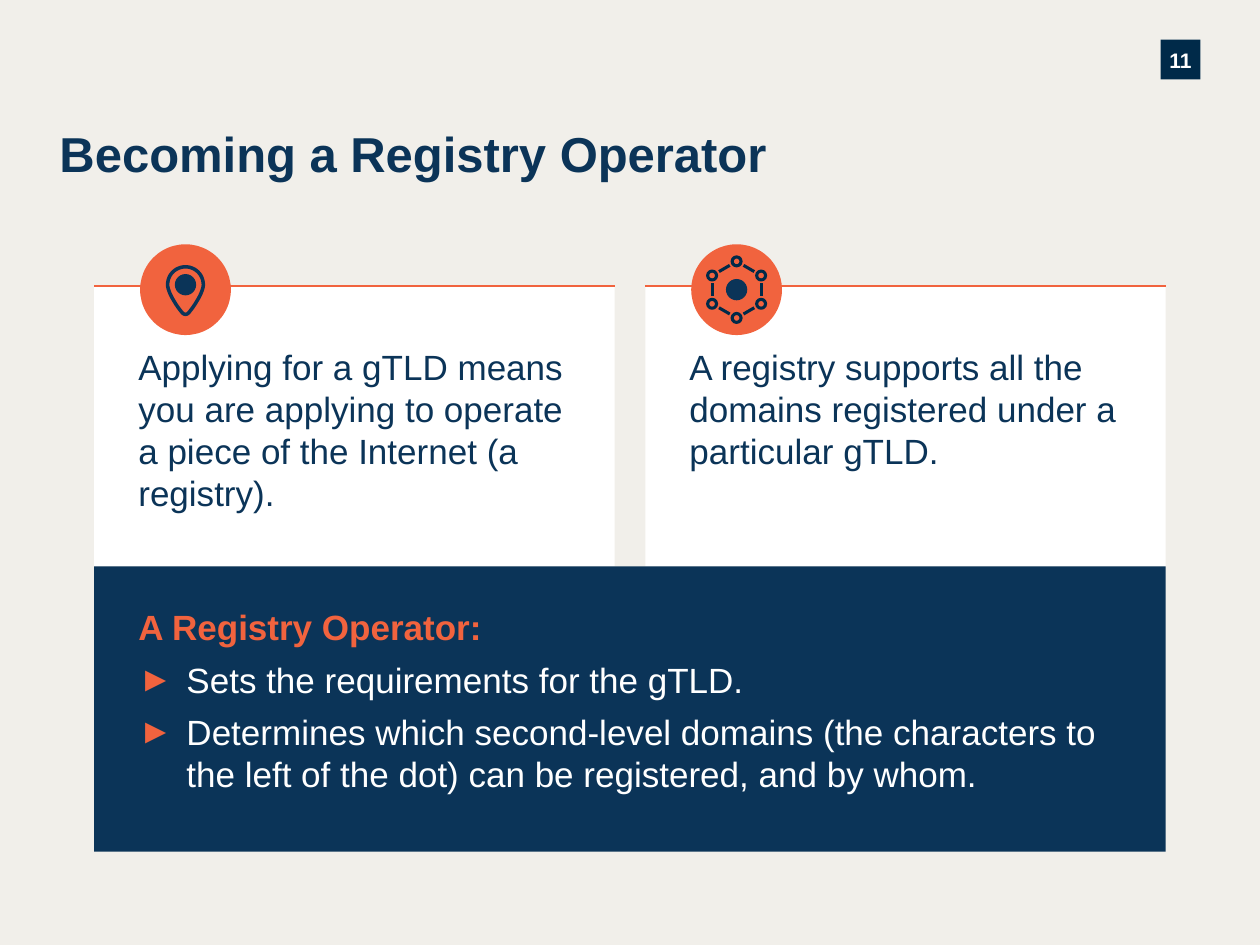
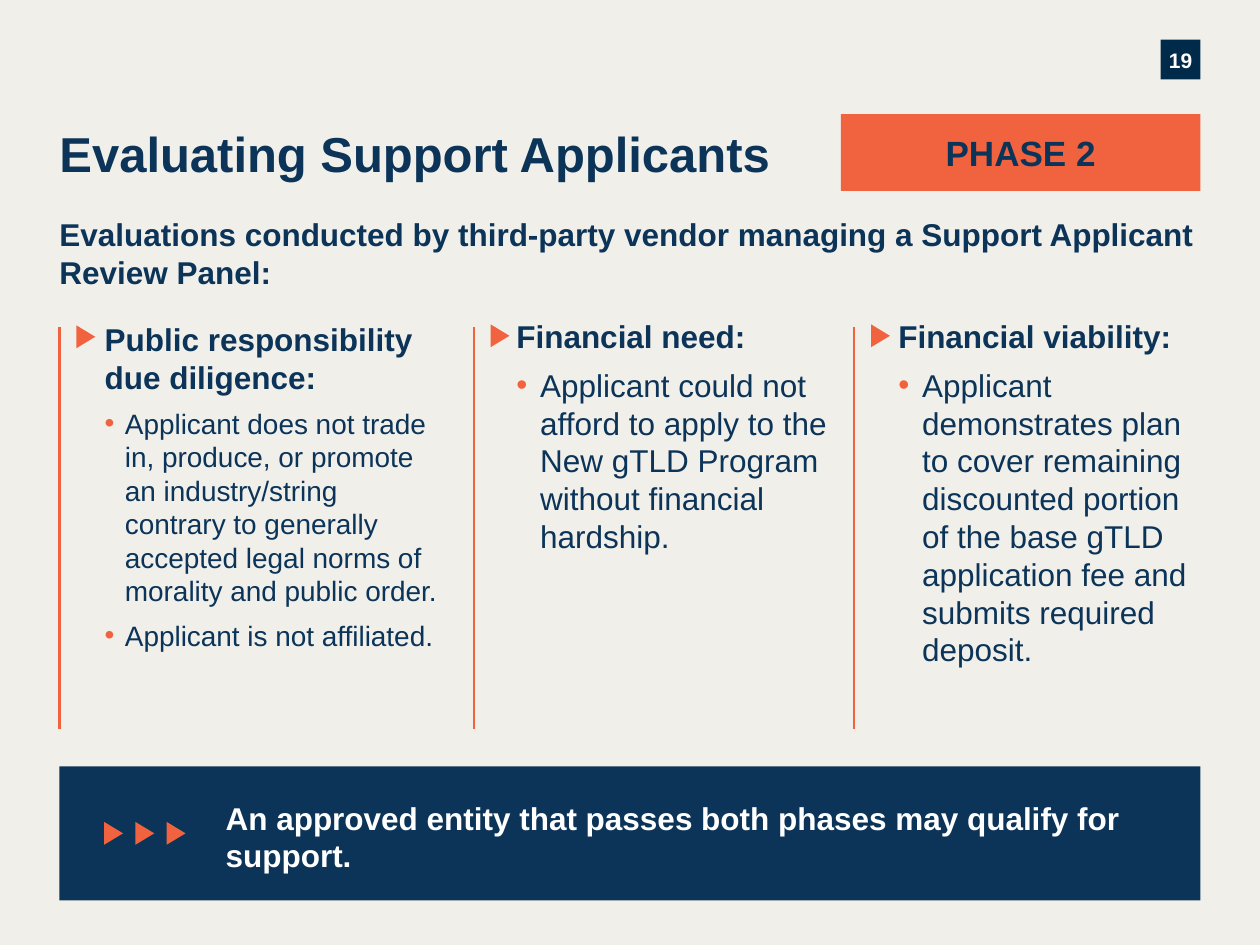
import dataclasses
import math

import lxml.etree
import pptx
import pptx.dml.color
import pptx.enum.shapes
import pptx.enum.text
import pptx.oxml.ns
import pptx.util

Cm, Pt = pptx.util.Cm, pptx.util.Pt
MSO = pptx.enum.shapes.MSO_SHAPE
ALIGN = pptx.enum.text.PP_ALIGN
ANCHOR = pptx.enum.text.MSO_ANCHOR
qn = pptx.oxml.ns.qn


@dataclasses.dataclass(frozen=True)
class Theme:
    font: str = "Arial"
    paper: str = "F1EFEA"
    white: str = "FFFFFF"
    navy: str = "0B3458"
    ink: str = "002A49"
    orange: str = "F1633E"
    title: int = 28
    large: int = 20
    medium: int = 18
    small: int = 16
    number: int = 12
    rule: float = 1.25
    link: float = 1.75
    pin: float = 2


T = Theme()
WIDTH, HEIGHT, MARGIN = 25.4, 19.05, 1.2
INNER = WIDTH - 2 * MARGIN

REGISTRY = {
    "number": "11",
    "title": "Becoming a Registry Operator",
    "cards": [
        ("pin", "Applying for a gTLD means you are applying to operate "
                "a piece of the Internet (a registry)."),
        ("network", "A registry supports all the domains registered under "
                    "a particular gTLD."),
    ],
    "heading": "A Registry Operator:",
    "duties": [
        "Sets the requirements for the gTLD.",
        "Determines which second-level domains (the characters to the left "
        "of the dot) can be registered, and by whom.",
    ],
}

EVALUATION = {
    "number": "19",
    "title": "Evaluating Support Applicants",
    "phase": "PHASE 2",
    "intro": "Evaluations conducted by third-party vendor managing a "
             "Support Applicant Review Panel:",
    "columns": [
        {"rule": 1.2, "text": (2.11, 6.45, 6.71), "arrow": 6.6,
         "size": T.small, "indent": 0.41,
         "heading": "Public responsibility\vdue diligence:",
         "points": [
             "Applicant does not trade in, produce, or promote an "
             "industry/string contrary to generally accepted legal norms of "
             "morality and public order.",
             "Applicant is not affiliated."]},
        {"rule": 9.55, "text": (10.41, 6.4, 6.38), "arrow": 6.58,
         "size": T.medium, "indent": 0.48,
         "heading": "Financial need:",
         "points": [
             "Applicant could not afford to apply to the New gTLD Program "
             "without financial hardship."]},
        {"rule": 17.22, "text": (18.11, 6.4, 6.1), "arrow": 6.58,
         "size": T.medium, "indent": 0.48,
         "heading": "Financial viability:",
         "points": [
             "Applicant demonstrates plan to cover remaining discounted "
             "portion of the base gTLD application fee and submits required "
             "deposit."]},
    ],
    "outcome": "An approved entity that passes both phases may qualify for "
               "support.",
}

PIN_START = (0.07, 0.56)
PIN_CURVES = [
    ((0.03, 0.61), (-0.03, 0.61), (-0.07, 0.56)),
    ((-0.18, 0.43), (-0.36, 0.15), (-0.36, 0)),
    ((-0.36, -0.2), (-0.2, -0.36), (0, -0.36)),
    ((0.2, -0.36), (0.36, -0.2), (0.36, 0)),
    ((0.36, 0.15), (0.18, 0.43), PIN_START),
]


def rgb(code):
    return pptx.dml.color.RGBColor.from_string(code)


def assign(obj, values):
    for name, value in values.items():
        setattr(obj, name, value)


def paint(sp, fill=None, line=None, width=T.rule):
    sp.shadow.inherit = False
    if fill:
        sp.fill.solid()
        sp.fill.fore_color.rgb = rgb(fill)
    else:
        sp.fill.background()
    if line:
        sp.line.color.rgb = rgb(line)
        sp.line.width = Pt(width)
    else:
        sp.line.fill.background()
    return sp


def shape(shapes, kind, x, y, w, h, fill=None, **border):
    sp = shapes.add_shape(kind, Cm(x), Cm(y), Cm(w), Cm(h))
    return paint(sp, fill, **border)


def disc(shapes, cx, cy, d, fill=None, **border):
    return shape(shapes, MSO.OVAL, cx - d / 2, cy - d / 2, d, d, fill, **border)


def line(shapes, start, end, color=T.orange, width=T.rule):
    cn = shapes.add_connector(pptx.enum.shapes.MSO_CONNECTOR.STRAIGHT,
                              *(Cm(v) for v in (*start, *end)))
    cn.line.color.rgb = rgb(color)
    cn.line.width = Pt(width)
    lxml.etree.SubElement(cn._element.spPr, qn("a:effectLst"))


def arrow(s, x, y):
    shape(s.shapes, MSO.ISOSCELES_TRIANGLE, x, y, 0.46, 0.38, T.orange).rotation = 90


def para(text, size, color=T.navy, bold=False, bullet=None, indent=0, **layout):
    return {"text": text, "bullet": bullet, "indent": indent, "layout": layout,
            "font": {"name": T.font, "size": Pt(size), "bold": bold},
            "color": color}


def add_bullet(p, char, indent):
    pPr = p._p.get_or_add_pPr()
    pPr.set("marL", str(Cm(indent)))
    pPr.set("indent", str(-Cm(indent)))
    color = lxml.etree.SubElement(pPr, qn("a:buClr"))
    lxml.etree.SubElement(color, qn("a:srgbClr"), val=T.orange)
    lxml.etree.SubElement(pPr, qn("a:buFont"), typeface=T.font)
    lxml.etree.SubElement(pPr, qn("a:buChar"), char=char)


def write(sp, paras, inset=(0, 0, 0, 0), anchor=ANCHOR.TOP):
    tf = sp.text_frame
    sides = ("margin_left", "margin_top", "margin_right", "margin_bottom")
    assign(tf, {"word_wrap": True, "vertical_anchor": anchor,
                **{side: Cm(v) for side, v in zip(sides, inset)}})
    for i, item in enumerate(paras):
        p = tf.add_paragraph() if i else tf.paragraphs[0]
        p.text = item["text"]
        if item["bullet"]:
            add_bullet(p, item["bullet"], item["indent"])
        assign(p, {"alignment": ALIGN.LEFT, **item["layout"]})
        for r in p.runs:
            assign(r.font, item["font"])
            r.font.color.rgb = rgb(item["color"])


def text(s, x, y, w, h, paras, **frame):
    write(s.shapes.add_textbox(Cm(x), Cm(y), Cm(w), Cm(h)), paras, **frame)


def new_slide(prs, content):
    s = prs.slides.add_slide(prs.slide_layouts[6])
    s.background.fill.solid()
    s.background.fill.fore_color.rgb = rgb(T.paper)
    side = 0.8
    badge = shape(s.shapes, MSO.RECTANGLE, WIDTH - MARGIN - side, side, side, side, T.ink)
    write(badge, [para(content["number"], T.number, T.white, True,
                       alignment=ALIGN.CENTER, line_spacing=1.08)],
          anchor=ANCHOR.MIDDLE)
    text(s, MARGIN, 2.49, 15, 1.3, [para(content["title"], T.title, bold=True)])
    return s


def pin(shapes, cx, cy):
    cy -= 0.1
    disc(shapes, cx, cy, 0.43, T.navy)
    points, a, steps = [], PIN_START, 12
    for b, c, d in PIN_CURVES:
        for t in (i / steps for i in range(1, steps + 1)):
            u = 1 - t
            points.append(tuple(
                Cm(o + u**3 * a[k] + 3 * u * u * t * b[k]
                   + 3 * u * t * t * c[k] + t**3 * d[k])
                for k, o in enumerate((cx, cy))))
        a = d
    outline = shapes.build_freeform(*points[-1])
    outline.add_line_segments(points, close=True)
    paint(outline.convert_to_shape(), line=T.navy, width=T.pin)


def network(shapes, cx, cy):
    disc(shapes, cx, cy, 0.43, T.navy)
    angles = [math.radians(60 * i - 90) for i in range(6)]
    nodes = [(cx + 0.57 * math.cos(a), cy + 0.57 * math.sin(a)) for a in angles]
    for (x1, y1), (x2, y2) in zip(nodes, nodes[1:] + nodes[:1]):
        start, end = ((x1 + (x2 - x1) * f, y1 + (y2 - y1) * f) for f in (0.28, 0.72))
        line(shapes, start, end, T.ink, T.link)
        disc(shapes, x1, y1, 0.18, line=T.ink, width=T.link)


ICONS = {"pin": pin, "network": network}


def registry_slide(prs):
    s = new_slide(prs, REGISTRY)
    left, top, total, gap, panel_top = 1.9, 5.77, 21.6, 0.62, 11.42
    cards = REGISTRY["cards"]
    w = (total - gap * (len(cards) - 1)) / len(cards)
    for i, (icon, words) in enumerate(cards):
        x = left + i * (w + gap)
        card = shape(s.shapes, MSO.RECTANGLE, x, top, w, panel_top - top, T.white)
        write(card, [para(words, T.large)], inset=(0.89, 1.19, 0.99, 0.76))
        line(s.shapes, (x, top), (x + w, top))
        group = s.shapes.add_group_shape().shapes
        center = x + 1.84, top + 0.07
        disc(group, *center, 1.83, T.orange)
        ICONS[icon](group, *center)
    panel = shape(s.shapes, MSO.RECTANGLE, left, panel_top, total, 5.75, T.navy)
    duties = [para(d, T.large, T.white, bullet="►", indent=0.97, space_before=Pt(6))
              for d in REGISTRY["duties"]]
    write(panel, [para(REGISTRY["heading"], T.large, T.orange, True), *duties],
          inset=(0.89, 0.79, 1.19, 0.76))


def evaluation_slide(prs):
    s = new_slide(prs, EVALUATION)
    tag = shape(s.shapes, MSO.RECTANGLE, 16.95, 2.3, 7.25, 1.55, T.orange)
    write(tag, [para(EVALUATION["phase"], T.large, bold=True, alignment=ALIGN.CENTER)],
          anchor=ANCHOR.MIDDLE)
    text(s, MARGIN, 4.34, INNER, 1.6, [para(EVALUATION["intro"], T.medium, bold=True)])
    for col in EVALUATION["columns"]:
        line(s.shapes, (col["rule"], 6.59), (col["rule"], 14.69))
        arrow(s, col["rule"] + 0.3, col["arrow"])
        points = [para(words, col["size"], bullet="•", indent=col["indent"],
                       space_before=Pt(6)) for words in col["points"]]
        text(s, *col["text"], 8, [para(col["heading"], T.medium, bold=True), *points])
    shape(s.shapes, MSO.RECTANGLE, MARGIN, 15.45, INNER, 2.7, T.navy)
    for i in range(3):
        arrow(s, 2.06 + 0.63 * i, 16.61)
    text(s, 4.3, 15.85, 19.2, 1.9,
         [para(EVALUATION["outcome"], T.medium, T.white, True)], inset=(0.25,) * 4)


def main():
    prs = pptx.Presentation()
    assign(prs, {"slide_width": Cm(WIDTH), "slide_height": Cm(HEIGHT)})
    registry_slide(prs)
    evaluation_slide(prs)
    prs.save("out.pptx")


if __name__ == "__main__":
    main()
